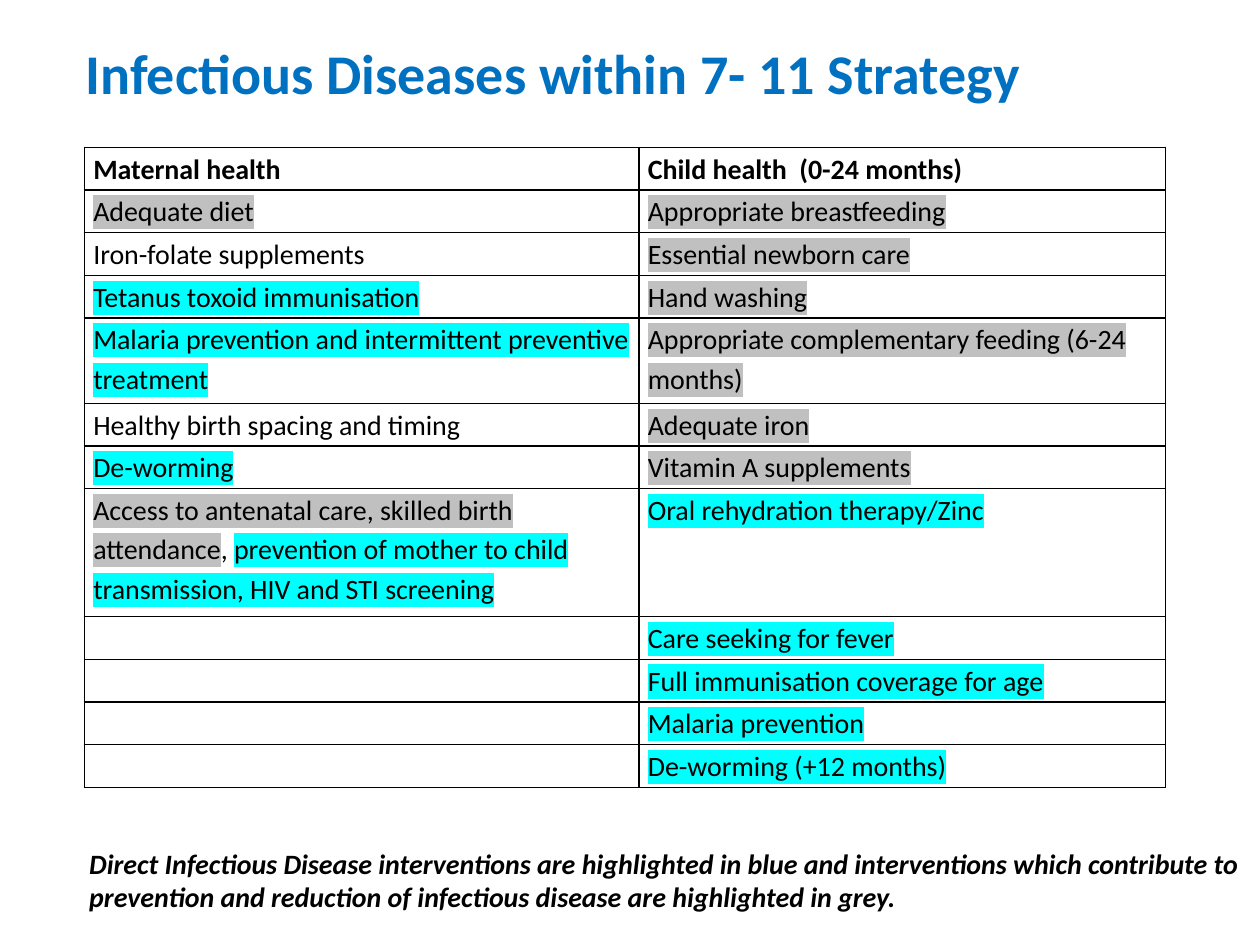
import dataclasses

import lxml.etree
import pptx
import pptx.dml.color
import pptx.enum.text
import pptx.oxml.ns
import pptx.util

Cm, Pt = pptx.util.Cm, pptx.util.Pt
RGB = pptx.dml.color.RGBColor.from_string
MSO_ANCHOR = pptx.enum.text.MSO_ANCHOR


@dataclasses.dataclass(frozen=True)
class Theme:
    font: str = "Calibri"
    title: str = "0070C0"
    text: str = "000000"
    paper: str = "FFFFFF"
    grey: str = "C0C0C0"
    blue: str = "00FFFF"
    title_size: int = 32
    text_size: int = 16
    line_width: int = 1
    paper_opacity: int = 75


THEME = Theme()
GREY, BLUE = THEME.grey, THEME.blue

MATERNAL = [
    [("Adequate diet", GREY)],
    [("Iron-folate supplements", None)],
    [("Tetanus toxoid immunisation", BLUE)],
    [("Malaria prevention and intermittent preventive treatment", BLUE)],
    [("Healthy birth spacing and timing", None)],
    [("De-worming", BLUE)],
    [("Access to antenatal care, skilled birth attendance", GREY), (", ", None),
     ("prevention of mother to child transmission, HIV and STI screening", BLUE)],
    [], [], [], [],
]
CHILD = [
    [("Appropriate breastfeeding", GREY)],
    [("Essential newborn care", GREY)],
    [("Hand washing", GREY)],
    [("Appropriate complementary feeding (6-24 months)", GREY)],
    [("Adequate iron", GREY)],
    [("Vitamin A supplements", GREY)],
    [("Oral rehydration therapy/Zinc", BLUE)],
    [("Care seeking for fever", BLUE)],
    [("Full immunisation coverage for age", BLUE)],
    [("Malaria prevention", BLUE)],
    [("De-worming (+12 months)", BLUE)],
]
LINES_PER_ROW = [1, 1, 1, 1, 2, 1, 1, 3, 1, 1, 1, 1]


class Deck:
    """Build styled elements on the current slide."""

    def __init__(self, theme):
        self.theme = theme
        self.prs = pptx.Presentation()
        self.prs.slide_width, self.prs.slide_height = Cm(25.4), Cm(19.05)
        self.s = None

    def add_slide(self):
        self.s = self.prs.slides.add_slide(self.prs.slide_layouts[5])

    def sub(self, parent, tag, **attrs):
        return lxml.etree.SubElement(parent, pptx.oxml.ns.qn(tag), attrs)

    def run(self, p, text, color, size, highlight=None, **extra):
        r = p.add_run()
        r.text = text
        if highlight:
            mark = self.sub(r.font._element, "a:highlight")
            self.sub(mark, "a:srgbClr", val=highlight)
        fmt = {"name": self.theme.font, "size": Pt(size), **extra}
        for name, value in fmt.items():
            setattr(r.font, name, value)
        r.font.color.rgb = RGB(color)

    def frame(self, tf, anchor):
        fmt = {"word_wrap": True, "vertical_anchor": anchor,
               "auto_size": pptx.enum.text.MSO_AUTO_SIZE.SHAPE_TO_FIT_TEXT}
        for name, value in fmt.items():
            setattr(tf, name, value)
        p = tf.paragraphs[0]
        p.alignment = pptx.enum.text.PP_ALIGN.LEFT
        return p

    def title(self, text, left, top, width, height):
        sp = self.s.shapes.title
        box = {"left": left, "top": top, "width": width, "height": height}
        for name, value in box.items():
            setattr(sp, name, Cm(value))
        p = self.frame(sp.text_frame, MSO_ANCHOR.TOP)
        self.run(p, text, self.theme.title, self.theme.title_size, bold=True)

    def note(self, text, *box):
        sp = self.s.shapes.add_textbox(*map(Cm, box))
        p = self.frame(sp.text_frame, MSO_ANCHOR.MIDDLE)
        self.run(p, text, self.theme.text, self.theme.text_size, bold=True, italic=True)

    def cell(self, cell, runs, bold):
        fmt = {"margin_left": Cm(0.18), "margin_right": Cm(0.18),
               "margin_top": 0, "margin_bottom": 0}
        for name, value in fmt.items():
            setattr(cell, name, value)
        tc_pr = cell._tc.get_or_add_tcPr()
        for side in "LRTB":
            ln = self.sub(tc_pr, f"a:ln{side}", w=str(Pt(self.theme.line_width)))
            self.sub(self.sub(ln, "a:solidFill"), "a:srgbClr", val=self.theme.text)
        cell.fill.solid()
        cell.fill.fore_color.rgb = RGB(self.theme.paper)
        paper = tc_pr.find(pptx.oxml.ns.qn("a:solidFill"))[0]
        self.sub(paper, "a:alpha", val=str(self.theme.paper_opacity * 1000))
        p = cell.text_frame.paragraphs[0]
        p.line_spacing = 1.15
        for text, highlight in runs:
            self.run(p, text, self.theme.text, self.theme.text_size, highlight, bold=bold)

    def table(self, rows, left, top, widths, line_height, lines):
        size = (sum(widths), line_height * sum(lines))
        table = self.s.shapes.add_table(
            len(rows), len(widths), *map(Cm, (left, top, *size))).table
        table.horz_banding = table.first_row = False
        for col, width in zip(table.columns, widths):
            col.width = Cm(width)
        for i, (row, count) in enumerate(zip(table.rows, lines)):
            row.height = Cm(line_height * count)
            for cell, runs in zip(row.cells, rows[i]):
                self.cell(cell, runs, bold=i == 0)


def main():
    deck = Deck(THEME)
    deck.add_slide()
    deck.title("Infectious Diseases within 7- 11 Strategy", 1.47, 0.64, 22.66, 1.6)
    header = ([("Maternal health", None)], [("Child health  (0-24 months)", None)])
    deck.table([header, *zip(MATERNAL, CHILD)], 1.7, 2.97, (11.18, 10.62),
               0.86, LINES_PER_ROW)
    deck.note("Direct Infectious Disease interventions are highlighted in blue and "
              "interventions which contribute to prevention and reduction of "
              "infectious disease are highlighted in grey.", 1.55, 16.92, 24.05, 1.63)
    deck.prs.save("out.pptx")


if __name__ == "__main__":
    main()
